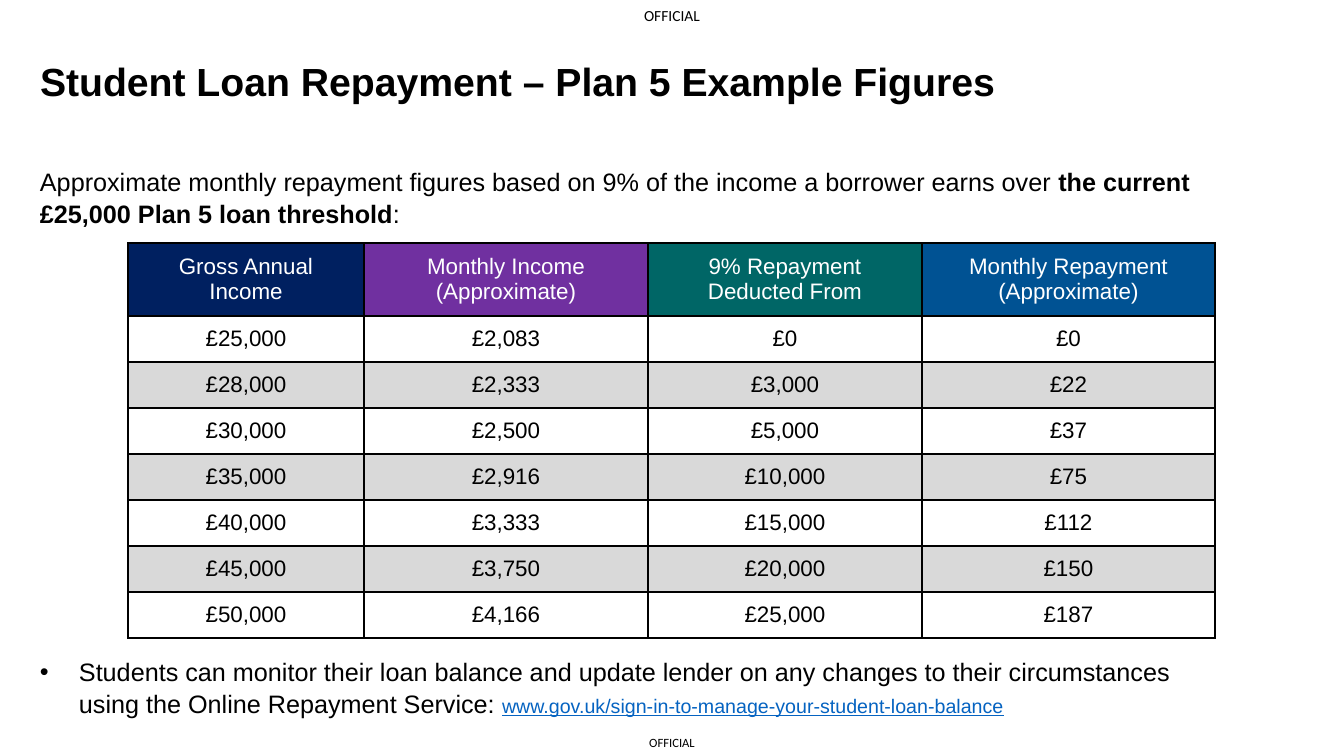
from dataclasses import dataclass

import lxml.etree
import pptx
import pptx.dml.color
import pptx.enum.text
import pptx.oxml.ns
import pptx.util

EMU_PER_PX = 914400 / 100.8
COLOURS = {
    "black": "000000", "white": "FFFFFF", "grey": "D9D9D9", "link": "0563C1",
    "navy": "002060", "purple": "7030A0", "teal": "006666", "blue": "005293",
}
CENTER = pptx.enum.text.PP_ALIGN.CENTER
LEFT = pptx.enum.text.PP_ALIGN.LEFT
TOP = pptx.enum.text.MSO_ANCHOR.TOP
MIDDLE = pptx.enum.text.MSO_ANCHOR.MIDDLE


@dataclass
class Span:
    text: str
    size: int = 18
    bold: bool = False
    underline: bool = False
    colour: str = "black"
    font: str = "Arial"


@dataclass
class TextBlock:
    left: int
    top: int
    width: int
    height: int
    spans: list[Span]
    align: int = LEFT
    anchor: int = TOP
    line_spacing: float = 1.0
    inset: tuple[int, int] = (10, 5)
    bullet_indent: int = 0


@dataclass
class Column:
    width: int
    colour: str
    heading: list[str]
    values: list[str]


def px(length: int) -> int:
    return pptx.util.Emu(round(length * EMU_PER_PX))


def rgb(name: str) -> pptx.dml.color.RGBColor:
    return pptx.dml.color.RGBColor.from_string(COLOURS[name])


def add_child(parent, tag: str, **attributes: str):
    return lxml.etree.SubElement(parent, pptx.oxml.ns.qn(tag), attributes)


def add_span(para, span: Span) -> None:
    run = para.add_run()
    run.text = span.text
    run.font.name = span.font
    run.font.size = pptx.util.Pt(span.size)
    run.font.bold = span.bold
    run.font.underline = span.underline
    run.font.color.rgb = rgb(span.colour)


def add_text(page, block: TextBlock) -> None:
    box = page.shapes.add_textbox(
        px(block.left), px(block.top), px(block.width), px(block.height))
    frame = box.text_frame
    frame.word_wrap = True
    frame.vertical_anchor = block.anchor
    frame.margin_left = frame.margin_right = px(block.inset[0])
    frame.margin_top = frame.margin_bottom = px(block.inset[1])
    para = frame.paragraphs[0]
    para.alignment = block.align
    para.line_spacing = block.line_spacing
    if block.bullet_indent:
        properties = para._p.get_or_add_pPr()
        properties.set("marL", str(px(block.bullet_indent)))
        properties.set("indent", str(-px(block.bullet_indent)))
        add_child(properties, "a:buFont", typeface="Arial")
        add_child(properties, "a:buChar", char="•")
    for span in block.spans:
        add_span(para, span)


def fill_cell(cell, lines: list[str], fill: str, text_colour: str) -> None:
    cell.margin_left = cell.margin_right = px(6)
    cell.margin_top = cell.margin_bottom = px(6)
    cell.vertical_anchor = MIDDLE
    properties = cell._tc.get_or_add_tcPr()
    for side in ("a:lnL", "a:lnR", "a:lnT", "a:lnB"):
        border = add_child(properties, side, w=str(pptx.util.Pt(1)))
        add_child(add_child(border, "a:solidFill"), "a:srgbClr", val=COLOURS["black"])
    cell.fill.solid()
    cell.fill.fore_color.rgb = rgb(fill)
    for index, line in enumerate(lines):
        frame = cell.text_frame
        para = frame.add_paragraph() if index else frame.paragraphs[0]
        para.alignment = CENTER
        add_span(para, Span(line, size=16, colour=text_colour))


def add_repayment_table(page, left: int, top: int, columns: list[Column]) -> None:
    heights = [73] + [46] * len(columns[0].values)
    width = sum(column.width for column in columns)
    table = page.shapes.add_table(
        len(heights), len(columns), px(left), px(top), px(width), px(sum(heights))).table
    table.first_row = table.horz_banding = False
    for row, height in zip(table.rows, heights):
        row.height = px(height)
    for index, column in enumerate(columns):
        table.columns[index].width = px(column.width)
        fill_cell(table.cell(0, index), column.heading, column.colour, "white")
        for row, value in enumerate(column.values, start=1):
            band = "white" if row % 2 else "grey"
            fill_cell(table.cell(row, index), [value], band, "black")


TEXT_BLOCKS = [
    # Classification markings
    TextBlock(635, 729, 74, 27, [Span("OFFICIAL", 9, font="Calibri")],
              CENTER, MIDDLE, inset=(0, 0)),
    TextBlock(628, 0, 88, 31, [Span("OFFICIAL", 11, font="Calibri")],
              CENTER, MIDDLE, inset=(0, 0)),
    # Title
    TextBlock(30, 48, 1194, 72,
              [Span("Student Loan Repayment – Plan 5 Example Figures", 28, bold=True)],
              anchor=MIDDLE, line_spacing=0.9),
    # Introduction
    TextBlock(30, 160, 1188, 71, [
        Span("Approximate monthly repayment figures based on 9% of the income "
             "a borrower earns over "),
        Span("the current £25,000 Plan 5 loan threshold", bold=True),
        Span(":"),
    ], line_spacing=1.05),
    # Closing bullet
    TextBlock(30, 650, 1188, 71, [
        Span("Students can monitor their loan balance and update lender on any changes "
             "to their circumstances using the Online Repayment Service: "),
        Span("www.gov.uk/sign-in-to-manage-your-student-loan-balance", 14,
             underline=True, colour="link"),
    ], line_spacing=1.05, bullet_indent=39),
]

COLUMNS = [
    Column(236, "navy", ["Gross Annual", "Income"],
           ["£25,000", "£28,000", "£30,000", "£35,000", "£40,000", "£45,000", "£50,000"]),
    Column(284, "purple", ["Monthly Income", "(Approximate)"],
           ["£2,083", "£2,333", "£2,500", "£2,916", "£3,333", "£3,750", "£4,166"]),
    Column(274, "teal", ["9% Repayment", "Deducted From"],
           ["£0", "£3,000", "£5,000", "£10,000", "£15,000", "£20,000", "£25,000"]),
    Column(293, "blue", ["Monthly Repayment (Approximate)"],
           ["£0", "£22", "£37", "£75", "£112", "£150", "£187"]),
]


def main() -> None:
    deck = pptx.Presentation()
    deck.slide_width, deck.slide_height = px(1344), px(756)
    page = deck.slides.add_slide(deck.slide_layouts[6])
    for block in TEXT_BLOCKS:
        add_text(page, block)
    add_repayment_table(page, 128, 243, COLUMNS)
    deck.save("out.pptx")


if __name__ == "__main__":
    main()
